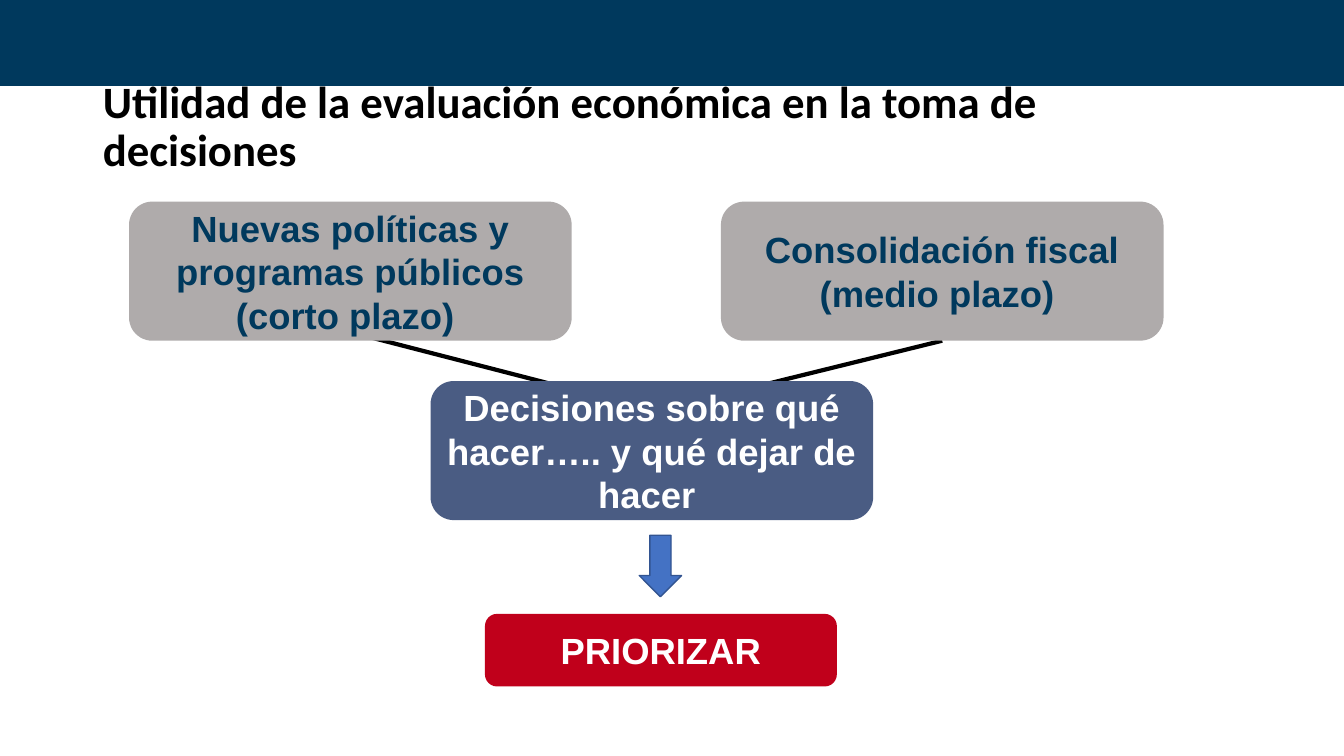
from pptx import Presentation
from pptx.dml.color import RGBColor
from pptx.enum.shapes import MSO_CONNECTOR, MSO_SHAPE
from pptx.enum.text import MSO_ANCHOR, MSO_AUTO_SIZE, PP_ALIGN
from pptx.oxml.ns import qn
from pptx.util import Inches, Pt
from lxml import etree

NAVY, GREY, SLATE, RED = "00395D", "AFABAB", "4A5C83", "C0001B"
BLACK, WHITE = "000000", "FFFFFF"
BOX_W, BOX_H = 4.39, 1.38


def rgb(color):
    return RGBColor.from_string(color)


def format_text(tf, font, size, color, align):
    tf.word_wrap = True
    tf.auto_size = MSO_AUTO_SIZE.NONE
    tf.vertical_anchor = MSO_ANCHOR.MIDDLE
    for p in tf.paragraphs:
        p.alignment = align
        for r in p.runs:
            r.font.name, r.font.size, r.font.bold = font, Pt(size), True
            r.font.color.rgb = rgb(color)


def add_shape(s, kind, left, top, width, height, fill, line=None):
    sp = s.shapes.add_shape(kind, Inches(left), Inches(top), Inches(width), Inches(height))
    sp.shadow.inherit = False
    sp.fill.solid()
    sp.fill.fore_color.rgb = rgb(fill)
    if line:
        sp.line.color.rgb = rgb(line)
        sp.line.width = Pt(1)
    else:
        sp.line.fill.background()
    return sp


def add_box(s, text, left, top, fill, color, width=BOX_W, height=BOX_H):
    sp = add_shape(s, MSO_SHAPE.ROUNDED_RECTANGLE, left, top, width, height, fill)
    tf = sp.text_frame
    tf.text = text
    tf.margin_left = tf.margin_right = Inches(0.08)
    format_text(tf, "Arial", 26, color, PP_ALIGN.CENTER)
    return sp


def add_line(s, x1, y1, x2, y2):
    line = s.shapes.add_connector(
        MSO_CONNECTOR.STRAIGHT, Inches(x1), Inches(y1), Inches(x2), Inches(y2))
    line.line.color.rgb = rgb(BLACK)
    line.line.width = Pt(3)
    etree.SubElement(line.element.spPr, qn("a:effectLst"))
    return line


def add_title(s, text):
    title = s.shapes.title
    title.left, title.top = Inches(0.92), Inches(0.74)
    title.width, title.height = Inches(11.5), Inches(1.06)
    tf = title.text_frame
    tf.text = text
    tf.margin_right = Inches(0.2)
    tf.paragraphs[0].line_spacing = 0.9
    format_text(tf, "Calibri", 32, BLACK, PP_ALIGN.LEFT)
    return title


def main():
    prs = Presentation()
    prs.slide_width, prs.slide_height = Inches(13.33), Inches(7.5)
    s = prs.slides.add_slide(prs.slide_layouts[5])

    # Header band behind the title
    title = add_title(s, "Utilidad de la evaluación económica en la toma de decisiones")
    band = add_shape(s, MSO_SHAPE.RECTANGLE, 0, 0, 13.33, 0.85, NAVY, NAVY)
    title.element.addprevious(band.element)

    # Lines run behind the boxes
    fiscal_line = add_line(s, 9.35, 3.38, 6.67, 4.04)
    add_line(s, 3.3, 3.25, 6.67, 4.12)

    # Two pressures leading to the decision
    add_box(s, "Nuevas políticas y programas públicos (corto plazo) ", 1.28, 2, GREY, NAVY)
    fiscal = add_box(s, "Consolidación fiscal (medio plazo) ", 7.15, 2, GREY, NAVY)
    fiscal_line.begin_connect(fiscal, 2)
    add_box(s, "Decisiones sobre qué hacer….. y qué dejar de hacer ", 4.27, 3.78, SLATE, WHITE)

    # Outcome
    add_shape(s, MSO_SHAPE.DOWN_ARROW, 6.34, 5.31, 0.42, 0.61, "4472C4", "325491")
    add_box(s, "PRIORIZAR", 4.81, 6.09, RED, WHITE, 3.49, 0.72)

    prs.save("out.pptx")


if __name__ == "__main__":
    main()
